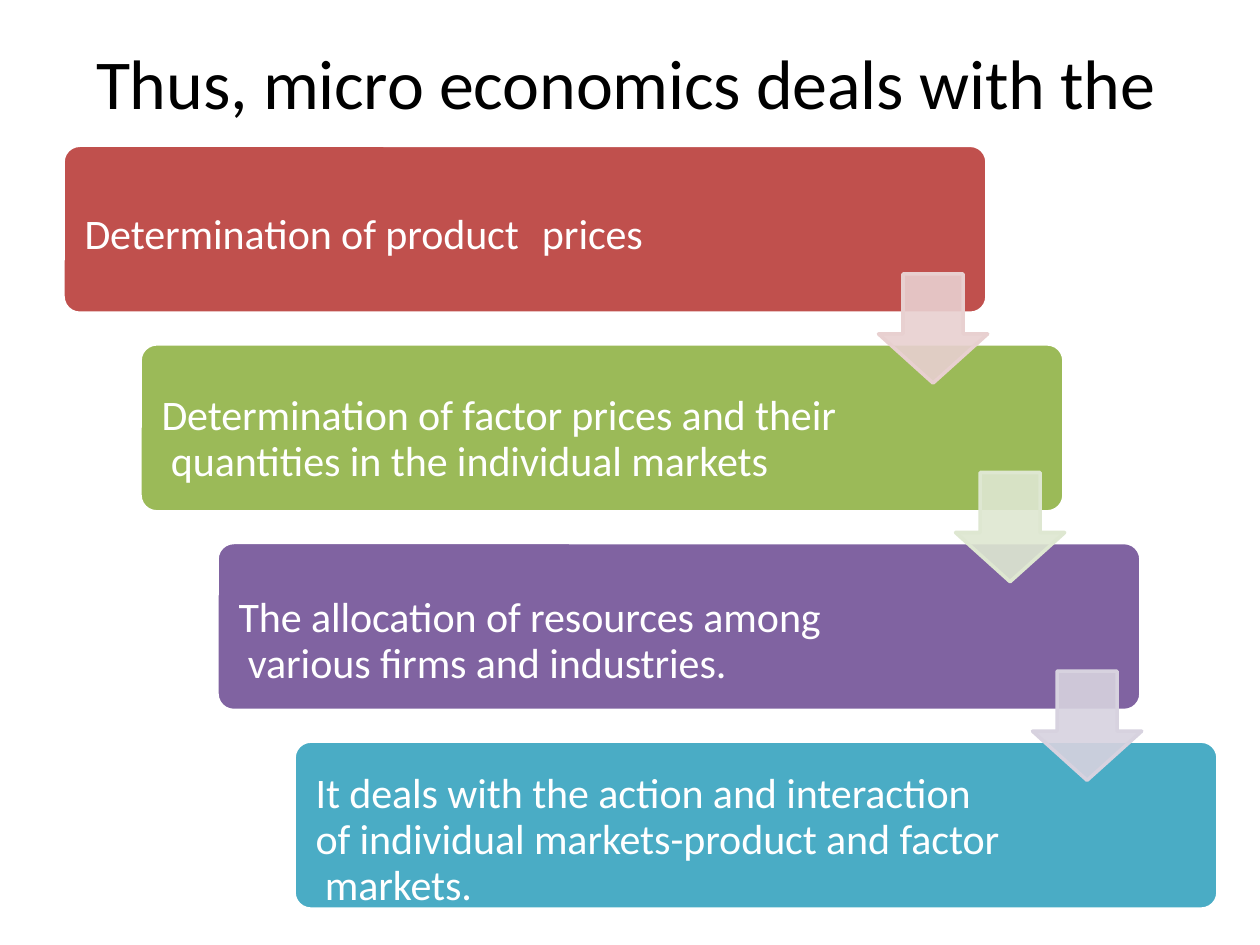
from pptx import Presentation
from pptx.dml.color import RGBColor
from pptx.enum.shapes import MSO_SHAPE
from pptx.enum.text import MSO_ANCHOR, PP_ALIGN
from pptx.oxml.ns import qn
from pptx.util import Pt
from lxml import etree

WHITE = RGBColor(0xFF, 0xFF, 0xFF)
BLACK = RGBColor(0x00, 0x00, 0x00)
RED = RGBColor(0xC0, 0x50, 0x4D)
GREEN = RGBColor(0x9B, 0xBA, 0x58)
PURPLE = RGBColor(0x80, 0x63, 0xA1)
TEAL = RGBColor(0x4A, 0xAC, 0xC5)
PINK = RGBColor(0xE8, 0xD0, 0xD0)
MINT = RGBColor(0xDE, 0xE7, 0xD1)
LILAC = RGBColor(0xD7, 0xD2, 0xDF)

# Each card: fill, space above its text, text
CARDS = [
    (RED, 35, "Determination of product\tprices"),
    (GREEN, 25, "Determination of factor prices and their\v quantities in the individual markets"),
    (PURPLE, 27, "The allocation of resources among\v various firms and industries."),
    (TEAL, 14, "It deals with the action and interaction\v"
               "of individual markets-product and factor\v markets."),
]
ARROWS = [PINK, MINT, LILAC]
STEP_X, STEP_Y = 44, 113.5
LINE = 2.04


def put_text(shape, text, size, color, left=0, top=0, pitch=None, space=0, tab=None):
    frame = shape.text_frame
    frame.word_wrap = True
    frame.vertical_anchor = MSO_ANCHOR.TOP
    frame.margin_left, frame.margin_top = Pt(left), Pt(top)
    frame.margin_right = frame.margin_bottom = 0
    para = frame.paragraphs[0]
    para.text = text
    para.alignment = PP_ALIGN.LEFT
    if pitch:
        para.line_spacing = Pt(pitch)
    if tab:
        props = para._p.get_or_add_pPr()
        stops = etree.SubElement(props, qn("a:tabLst"))
        etree.SubElement(stops, qn("a:tab"), pos=str(Pt(tab)), algn="l")
    for run in para.runs:
        font = run.font
        font.name, font.size, font.color.rgb = "Calibri", Pt(size), color
        run._r.get_or_add_rPr().set("spc", str(round(space * 100)))


def add_form(slide, kind, box, fill, line, adjust):
    shape = slide.shapes.add_shape(kind, *map(Pt, box))
    shape.shadow.inherit = False
    shape.fill.solid()
    shape.fill.fore_color.rgb = fill
    shape.line.color.rgb = line
    shape.line.width = Pt(LINE)
    for i, value in enumerate(adjust):
        shape.adjustments[i] = value
    return shape


def add_card(slide, i, fill, top, text):
    box = (36 + i * STEP_X, 83 + i * STEP_Y, 528, 96)
    card = add_form(slide, MSO_SHAPE.ROUNDED_RECTANGLE, box, fill, WHITE, [0.1])
    put_text(card, text, 24, WHITE, left=9.5, top=top, pitch=26.4, space=-0.05,
             tab=261.4 if "\t" in text else None)


def add_arrow(slide, i, color):
    box = (502 + i * STEP_X, 156.5 + i * STEP_Y, 62.4, 62.4)
    arrow = add_form(slide, MSO_SHAPE.DOWN_ARROW, box, color, color, [0.55, 0.45])
    # Let the cards show through the fill
    tint = arrow._element.spPr.find(qn("a:solidFill"))[0]
    etree.SubElement(tint, qn("a:alpha"), val="90000")


def main():
    deck = Presentation()
    deck.slide_width, deck.slide_height = Pt(720), Pt(540)
    slide = deck.slides.add_slide(deck.slide_layouts[6])

    # Staircase of cards, then the arrows between them
    for i, card in enumerate(CARDS):
        add_card(slide, i, *card)
    for i, color in enumerate(ARROWS):
        add_arrow(slide, i, color)

    # Title
    title = slide.shapes.add_textbox(Pt(55), Pt(22.5), Pt(620), Pt(50))
    put_text(title, "Thus, micro economics deals with the", 40, BLACK, space=-0.1)

    deck.save("out.pptx")


if __name__ == "__main__":
    main()
